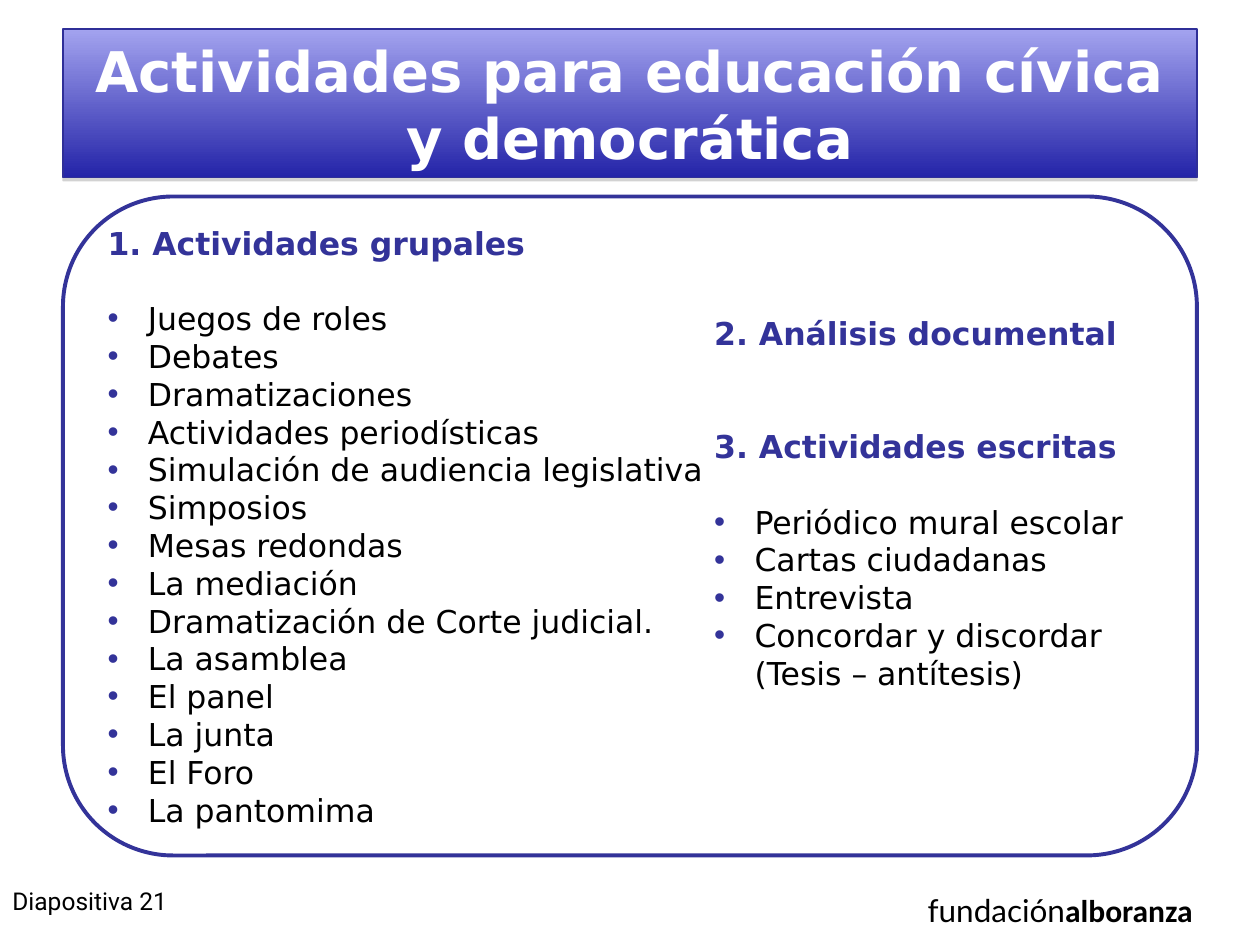
from dataclasses import dataclass

from lxml.etree import SubElement
from pptx import Presentation
from pptx.dml.color import RGBColor
from pptx.enum.shapes import MSO_SHAPE as Preset
from pptx.enum.text import MSO_ANCHOR as Anchor, MSO_AUTO_SIZE as AutoSize, PP_ALIGN as Align
from pptx.oxml import parse_xml
from pptx.oxml.ns import nsdecls, qn
from pptx.util import Inches, Pt

INDIGO = RGBColor(0x33, 0x33, 0x99)
BANNER_TOP = RGBColor(0xA3, 0xA3, 0xEF)
BANNER_BOTTOM = RGBColor(0x24, 0x24, 0xA8)
BANNER_EDGE = RGBColor(0x2F, 0x2F, 0x98)
BLACK = RGBColor(0, 0, 0)
WHITE = RGBColor(255, 255, 255)

BODY_FONT = "DejaVu Sans"
BODY_SIZE = 18
LEADING = 1.2
BULLET_INDENT = Inches(0.32)


@dataclass(frozen=True)
class Section:
    heading: str
    items: tuple[str, ...] = ()
    lines_after: int = 1


@dataclass(frozen=True)
class Label:
    left: float
    top: float
    width: float
    height: float
    spans: tuple[tuple[str, str, bool], ...]
    size: int
    align: Align


GROUP_SECTIONS = (
    Section("1. Actividades grupales", (
        "Juegos de roles",
        "Debates",
        "Dramatizaciones",
        "Actividades periodísticas",
        "Simulación de audiencia legislativa",
        "Simposios",
        "Mesas redondas",
        "La mediación",
        "Dramatización de Corte judicial.",
        "La asamblea",
        "El panel",
        "La junta",
        "El Foro",
        "La pantomima",
    )),
)

WRITTEN_SECTIONS = (
    Section("2. Análisis documental", lines_after=2),
    Section("3. Actividades escritas", (
        "Periódico mural escolar",
        "Cartas ciudadanas",
        "Entrevista",
        "Concordar y discordar\v(Tesis – antítesis)",
    )),
)

LABELS = (
    Label(0, 6.98, 2.33, 0.52, (("Diapositiva 21", "Roboto", False),), 14, Align.LEFT),
    Label(6.83, 7.02, 3.17, 0.4,
          (("fundación", "Lato", False), ("alboranza", "Calibri", True)), 18, Align.CENTER),
)


def style_span(span, font: str, size: int, color: RGBColor, bold: bool) -> None:
    span.font.name = font
    span.font.size = Pt(size)
    span.font.color.rgb = color
    span.font.bold = bold


def add_bullet(para) -> None:
    properties = para._p.get_or_add_pPr()
    properties.set("marL", str(BULLET_INDENT))
    properties.set("indent", str(-BULLET_INDENT))
    color = SubElement(properties, qn("a:buClr"))
    SubElement(color, qn("a:srgbClr"), val=str(INDIGO))
    SubElement(properties, qn("a:buFont"), typeface="Arial")
    SubElement(properties, qn("a:buChar"), char="•")


def write_sections(frame, sections: tuple[Section, ...]) -> None:
    frame.word_wrap = True
    lines = [(text, section, text is section.heading)
             for section in sections for text in (section.heading, *section.items)]
    for index, (text, section, is_heading) in enumerate(lines):
        para = frame.paragraphs[0] if index == 0 else frame.add_paragraph()
        para.text = text
        para.alignment = Align.LEFT
        para.line_spacing = Pt(BODY_SIZE * LEADING)
        if is_heading:
            para.space_after = Pt(BODY_SIZE * LEADING * section.lines_after)
        else:
            add_bullet(para)
        for span in para.runs:
            style_span(span, BODY_FONT, BODY_SIZE, INDIGO if is_heading else BLACK, is_heading)


def format_title(title) -> None:
    title.left, title.top = Inches(0.5), Inches(0.23)
    title.width, title.height = Inches(9), Inches(1.18)
    title.fill.gradient()
    title.fill.gradient_angle = 270
    for stop, color in zip(title.fill.gradient_stops, (BANNER_TOP, BANNER_BOTTOM)):
        stop.color.rgb = color
    for position, stop in enumerate(title.fill.gradient_stops):
        stop.position = position
    title.line.color.rgb = BANNER_EDGE
    title.line.width = Pt(0.75)
    title._element.spPr.append(parse_xml(
        f'<a:effectLst {nsdecls("a")}>'
        f'<a:outerShdw blurRad="0" dist="{Pt(1.8)}" dir="5400000" rotWithShape="0">'
        '<a:srgbClr val="808080"><a:alpha val="35000"/></a:srgbClr>'
        '</a:outerShdw></a:effectLst>'))
    frame = title.text_frame
    frame.text = "Actividades para educación cívica y democrática"
    frame.word_wrap = True
    frame.auto_size = AutoSize.NONE
    frame.vertical_anchor = Anchor.MIDDLE
    para = frame.paragraphs[0]
    para.alignment = Align.CENTER
    para.line_spacing = Pt(32 * LEADING)
    style_span(para.runs[0], BODY_FONT, 32, WHITE, True)


def add_panel(page) -> None:
    panel = page.shapes.add_shape(
        Preset.ROUNDED_RECTANGLE, Inches(0.5), Inches(1.56), Inches(9), Inches(5.23))
    panel.adjustments[0] = 0.167
    panel.shadow.inherit = False
    panel.fill.background()
    panel.line.color.rgb = INDIGO
    panel.line.width = Pt(2.25)
    panel.text_frame.vertical_anchor = Anchor.MIDDLE
    write_sections(panel.text_frame, GROUP_SECTIONS)


def add_label(page, label: Label) -> None:
    box = page.shapes.add_textbox(
        Inches(label.left), Inches(label.top), Inches(label.width), Inches(label.height))
    box.text_frame.word_wrap = True
    para = box.text_frame.paragraphs[0]
    para.alignment = label.align
    for text, font, bold in label.spans:
        span = para.add_run()
        span.text = text
        style_span(span, font, label.size, BLACK, bold)


def main() -> None:
    deck = Presentation()
    deck.slide_width, deck.slide_height = Inches(10), Inches(7.5)
    page = deck.slides.add_slide(deck.slide_layouts[5])
    format_title(page.shapes.title)
    add_panel(page)
    written = page.shapes.add_textbox(Inches(5.57), Inches(2.44), Inches(3.76), Inches(3.43))
    write_sections(written.text_frame, WRITTEN_SECTIONS)
    for label in LABELS:
        add_label(page, label)
    deck.save("out.pptx")


if __name__ == "__main__":
    main()
